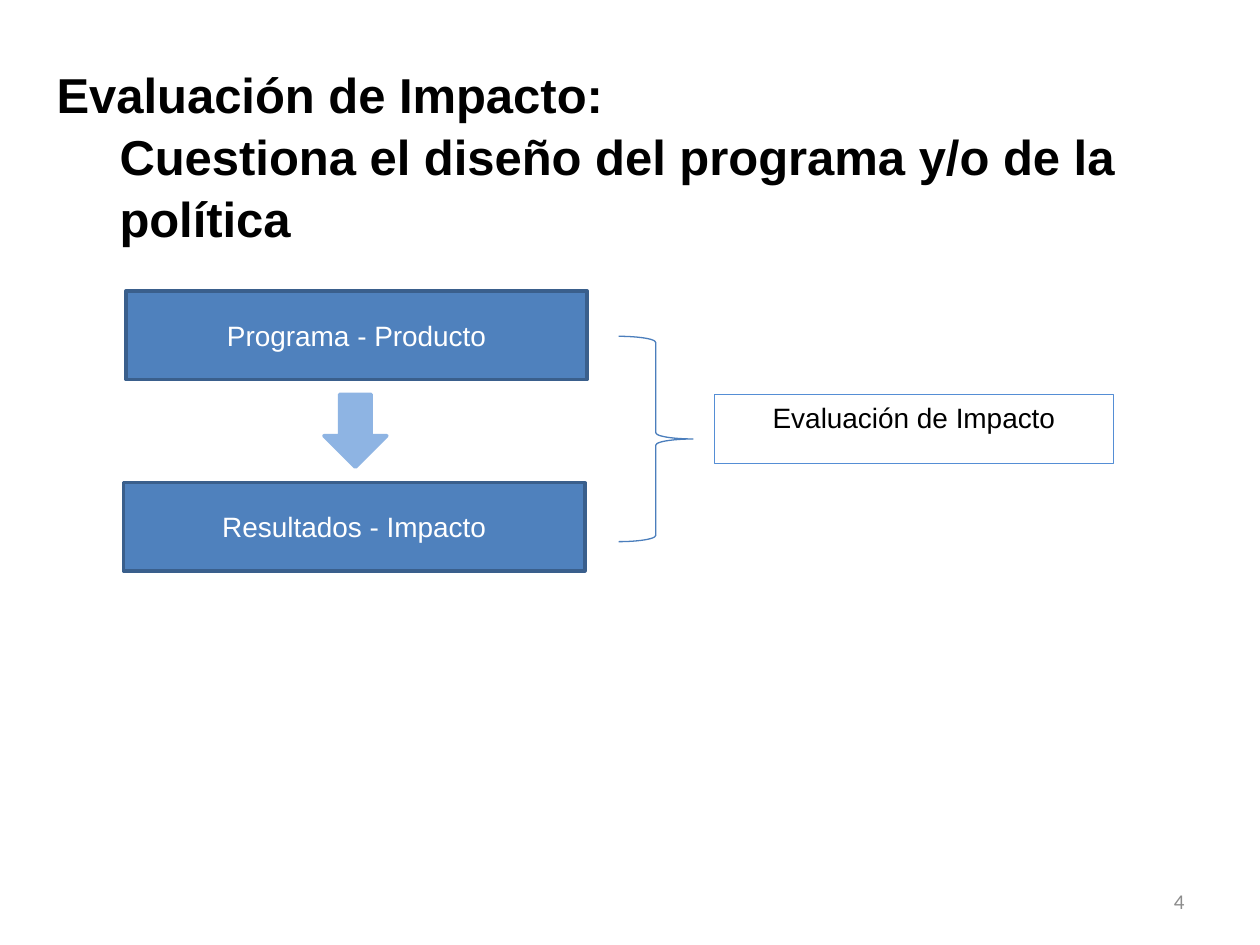
"""Build the slide on impact evaluation."""
from pptx import Presentation
from pptx.dml.color import RGBColor
from pptx.enum.shapes import MSO_SHAPE
from pptx.enum.text import MSO_ANCHOR, PP_ALIGN
from pptx.util import Cm, Pt

BLACK = RGBColor(0x00, 0x00, 0x00)
WHITE = RGBColor(0xFF, 0xFF, 0xFF)
GRAY = RGBColor(0x8C, 0x8C, 0x8C)
BLUE = RGBColor(0x4F, 0x81, 0xBD)
DARK_BLUE = RGBColor(0x3A, 0x5F, 0x8C)
LIGHT_BLUE = RGBColor(0x8E, 0xB4, 0xE3)
BRACE_BLUE = RGBColor(0x4B, 0x7E, 0xBC)
BORDER_BLUE = RGBColor(0x55, 0x8E, 0xD5)

TITLE = ["Evaluación de Impacto:",
         "Cuestiona el diseño del programa y/o de la política"]
STAGES = [("Programa - Producto", 2.54, 5.87),
          ("Resultados - Impacto", 2.49, 9.73)]
STAGE_SIZE = (9.3, 1.78)
OUTLINES = [
    (MSO_SHAPE.DOWN_ARROW, (6.53, 7.95, 1.27, 1.47), LIGHT_BLUE, LIGHT_BLUE, 2),
    (MSO_SHAPE.RIGHT_BRACE, (12.47, 6.78, 1.5, 4.14), None, BRACE_BLUE, 0.75),
]
CONCLUSION = "Evaluación de Impacto"
PAGE_NUMBER = "4"


def write(box, lines, size=16, color=BLACK, font="Arial", bold=False,
          align=PP_ALIGN.CENTER, anchor=MSO_ANCHOR.TOP, spacing=None):
    frame = box.text_frame
    frame.word_wrap = True
    frame.vertical_anchor = anchor
    for level, line in enumerate(lines):
        para = frame.add_paragraph() if level else frame.paragraphs[0]
        para.alignment = align
        para.line_spacing = spacing
        if level:
            para.level = level
            properties = para._p.get_or_add_pPr()
            properties.set("marL", str(Cm(1.27 * level)))
            properties.set("indent", "0")
        span = para.add_run()
        span.text = line
        span.font.name = font
        span.font.size = Pt(size)
        span.font.bold = bold
        span.font.color.rgb = color


def add_figure(page, kind, place, fill, line, width):
    shape = page.shapes.add_shape(kind, *map(Cm, place))
    shape.shadow.inherit = False
    if fill is None:
        shape.fill.background()
    else:
        shape.fill.solid()
        shape.fill.fore_color.rgb = fill
    shape.line.color.rgb = line
    shape.line.width = Pt(width)
    return shape


def add_text(page, place, lines, **style):
    write(page.shapes.add_textbox(*map(Cm, place)), lines, **style)


def main():
    deck = Presentation()
    deck.slide_width, deck.slide_height = Cm(25.4), Cm(19.05)
    page = deck.slides.add_slide(deck.slide_layouts[6])

    for label, left, top in STAGES:
        box = add_figure(page, MSO_SHAPE.RECTANGLE, (left, top, *STAGE_SIZE),
                         BLUE, DARK_BLUE, 2)
        write(box, [label], color=WHITE, anchor=MSO_ANCHOR.MIDDLE)
    for outline in OUTLINES:
        add_figure(page, *outline)
    box = add_figure(page, MSO_SHAPE.RECTANGLE, (14.4, 7.95, 8.05, 1.4),
                     None, BORDER_BLUE, 0.75)
    write(box, [CONCLUSION])

    add_text(page, (0.89, 1.12, 23.8, 3.84), TITLE, size=28, bold=True,
             align=PP_ALIGN.LEFT, spacing=1.05)
    add_text(page, (18.21, 17.65, 5.92, 1.02), [PAGE_NUMBER], size=12, color=GRAY,
             font="Calibri", align=PP_ALIGN.RIGHT, anchor=MSO_ANCHOR.MIDDLE)
    deck.save("out.pptx")


if __name__ == "__main__":
    main()
